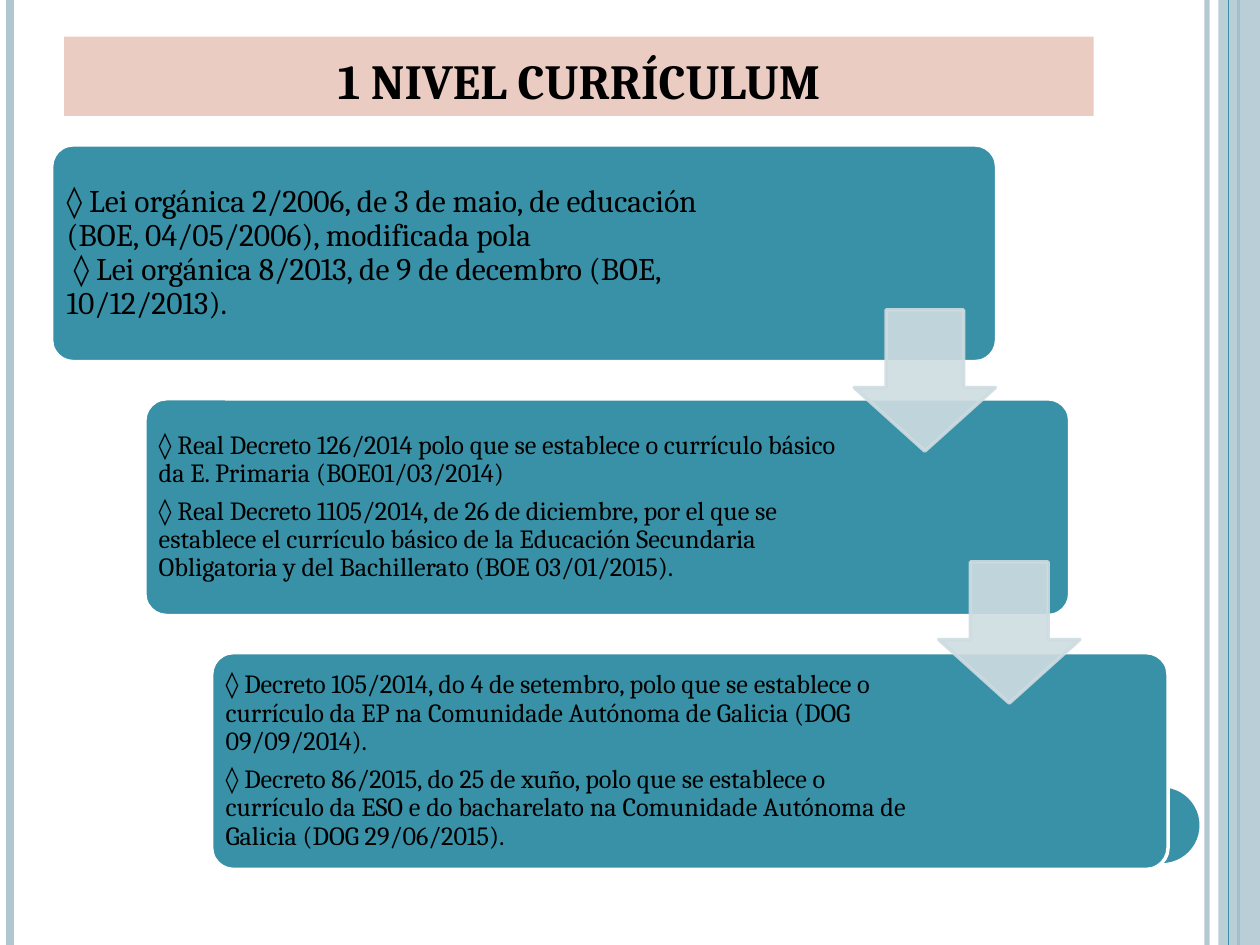
"""Build a slide showing the legal norms of the first curriculum level as a stepped cascade."""
from lxml.etree import SubElement
from pptx import Presentation
from pptx.dml.color import RGBColor
from pptx.enum.shapes import MSO_CONNECTOR as Connector, MSO_SHAPE as Shape
from pptx.enum.text import MSO_ANCHOR as Anchor, PP_ALIGN as Align
from pptx.oxml.ns import qn
from pptx.util import Inches, Pt

TITLE = "1 NIVEL CURRÍCULUM"
STEPS = [
    {"left": 0.41, "width": 7.5, "size": 18, "inset": 0.07, "after": 0, "norms": [
        "◊ Lei orgánica 2/2006, de 3 de maio, de educación (BOE, 04/05/2006), modificada pola",
        " ◊ Lei orgánica 8/2013, de 9 de decembro (BOE, 10/12/2013).",
    ]},
    {"left": 1.15, "width": 7.34, "size": 15, "inset": 0.06, "after": 0.35, "norms": [
        "◊ Real Decreto 126/2014 polo que se establece o currículo básico da E. Primaria (BOE01/03/2014)",
        "◊ Real Decreto 1105/2014, de 26 de diciembre, por el que se establece el currículo básico "
        "de la Educación Secundaria Obligatoria y del Bachillerato (BOE 03/01/2015).",
    ]},
    {"left": 1.68, "width": 7.59, "size": 15, "inset": 0.06, "after": 0.35, "norms": [
        "◊ Decreto 105/2014, do 4 de setembro, polo que se establece o currículo da EP na "
        "Comunidade Autónoma de Galicia (DOG 09/09/2014).",
        "◊ Decreto 86/2015, do 25 de xuño, polo que se establece o currículo da ESO e do "
        "bacharelato na Comunidade Autónoma de Galicia (DOG 29/06/2015).",
    ]},
]
COLORS = {"teal": "3891A7", "mist": "AFC7D0", "arrow": "CEDCE1", "rose": "EACCC3",
          "white": "FFFFFF", "black": "000000"}
FONT = "Cambria"
WIDTH, HEIGHT = 10, 7.5
CARD_TOP, CARD_HEIGHT, CARD_PITCH = 1.15, 1.72, 2.015
TEXT_MARGIN, TEXT_SHARE = 0.05, 0.75
ARROW_LEFT, ARROW_TOP, ARROW_SIZE = 6.78, 2.46, 1.12
ARROW_SHIFT, ARROW_PITCH = 0.67, 2
BACK_RULES = [(9.58, "mist", 3, 93), (0.08, "mist", 4.5, 100), (9.83, "teal", 1.5, 100)]
FRONT_RULES = [(9.75, "teal", 0.75, 100)]


def paint(fill, color, opacity=100):
    fill.solid()
    fill.fore_color.rgb = RGBColor.from_string(COLORS[color])
    if opacity < 100:
        tint = fill._xPr.find(f"{qn('a:solidFill')}/{qn('a:srgbClr')}")
        SubElement(tint, qn("a:alpha"), val=str(opacity * 1000))


def add_rule(page, x, color, weight, opacity):
    rule = page.shapes.add_connector(Connector.STRAIGHT, Inches(x), 0, Inches(x), Inches(HEIGHT))
    paint(rule.line.fill, color, opacity)
    rule.line.width = Pt(weight)
    SubElement(rule._element.spPr, qn("a:effectLst"))


def add_block(page, kind, place, color, opacity=100, outline=None, adjustments=()):
    block = page.shapes.add_shape(kind, *map(Inches, place))
    block.shadow.inherit = False
    paint(block.fill, color, opacity)
    if outline:
        paint(block.line.fill, outline, opacity)
        block.line.width = Pt(2)
    else:
        block.line.fill.background()
    for index, value in enumerate(adjustments):
        block.adjustments[index] = value


def style(paragraph, text, size, bold=False):
    paragraph.text = text
    font = paragraph.font
    font.name, font.size, font.bold = FONT, Pt(size), bold
    font.color.rgb = RGBColor.from_string(COLORS["black"])


def add_title(page):
    title = page.shapes.title
    title.left, title.top, title.width, title.height = map(Inches, (0.51, 0.29, 8.17, 0.63))
    paint(title.fill, "rose")
    title.text_frame.vertical_anchor = Anchor.BOTTOM
    paragraph = title.text_frame.paragraphs[0]
    style(paragraph, TITLE, 28, True)
    paragraph.alignment = Align.CENTER


def add_step(page, row, step):
    top = CARD_TOP + row * CARD_PITCH
    add_block(page, Shape.ROUNDED_RECTANGLE, (step["left"], top, step["width"], CARD_HEIGHT),
              "teal", outline="white", adjustments=(0.1,))
    place = (step["left"] + TEXT_MARGIN, top + TEXT_MARGIN,
             step["width"] * TEXT_SHARE, CARD_HEIGHT - 2 * TEXT_MARGIN)
    frame = page.shapes.add_textbox(*map(Inches, place)).text_frame
    frame.word_wrap = True
    frame.vertical_anchor = Anchor.MIDDLE
    frame.margin_left = frame.margin_right = Inches(step["inset"])
    frame.margin_top = frame.margin_bottom = Inches(step["inset"])
    for index, norm in enumerate(step["norms"]):
        paragraph = frame.add_paragraph() if index else frame.paragraphs[0]
        style(paragraph, norm, step["size"])
        paragraph.line_spacing = 0.9
        paragraph.space_after = Pt(step["size"] * step["after"])


def main():
    deck = Presentation()
    deck.slide_width, deck.slide_height = Inches(WIDTH), Inches(HEIGHT)
    page = deck.slides.add_slide(deck.slide_layouts[5])
    for rule in BACK_RULES:
        add_rule(page, *rule)
    add_block(page, Shape.RECTANGLE, (9.67, 0, 0.33, HEIGHT), "mist", opacity=87)
    for rule in FRONT_RULES:
        add_rule(page, *rule)
    add_block(page, Shape.OVAL, (8.92, 6.25, 0.6, 0.6), "teal")
    add_title(page)
    for row, step in enumerate(STEPS):
        add_step(page, row, step)
    for row in range(len(STEPS) - 1):
        place = (ARROW_LEFT + row * ARROW_SHIFT, ARROW_TOP + row * ARROW_PITCH,
                 ARROW_SIZE, ARROW_SIZE)
        add_block(page, Shape.DOWN_ARROW, place, "arrow", opacity=90, outline="arrow",
                  adjustments=(0.55, 0.45))
    deck.save("out.pptx")


if __name__ == "__main__":
    main()
